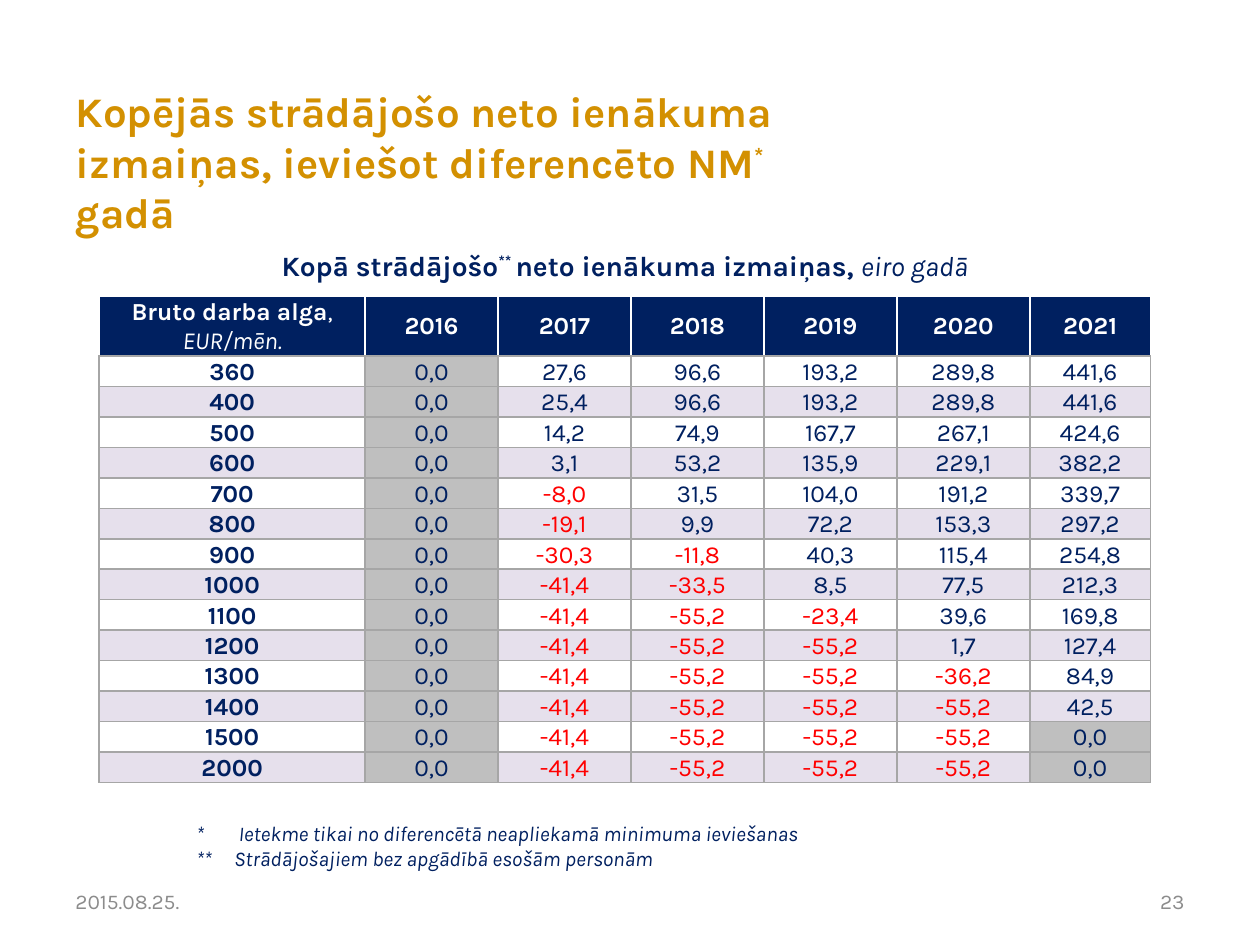
import pptx
import pptx.dml.color
import pptx.enum.text
import pptx.oxml
import pptx.oxml.ns
import pptx.util
from pptx.util import Cm

RGBColor = pptx.dml.color.RGBColor
ALIGN = pptx.enum.text.PP_ALIGN
ANCHOR = pptx.enum.text.MSO_ANCHOR
NAMESPACE = pptx.oxml.ns.nsdecls("a")

GOLD = RGBColor(0xD3, 0x90, 0x01)
NAVY = RGBColor(0x00, 0x20, 0x60)
RED = RGBColor(0xFF, 0x00, 0x00)
WHITE = RGBColor(0xFF, 0xFF, 0xFF)
LILAC = RGBColor(0xE6, 0xE0, 0xEC)
SILVER = RGBColor(0xBF, 0xBF, 0xBF)
BORDER_GREY = RGBColor(0xA6, 0xA6, 0xA6)
FOOTER_GREY = RGBColor(0x8C, 0x8C, 0x8C)

FONT = "Karla"
YEARS = ["2016", "2017", "2018", "2019", "2020", "2021"]
INCOME_CHANGES = [
    ["360", "0,0", "27,6", "96,6", "193,2", "289,8", "441,6"],
    ["400", "0,0", "25,4", "96,6", "193,2", "289,8", "441,6"],
    ["500", "0,0", "14,2", "74,9", "167,7", "267,1", "424,6"],
    ["600", "0,0", "3,1", "53,2", "135,9", "229,1", "382,2"],
    ["700", "0,0", "-8,0", "31,5", "104,0", "191,2", "339,7"],
    ["800", "0,0", "-19,1", "9,9", "72,2", "153,3", "297,2"],
    ["900", "0,0", "-30,3", "-11,8", "40,3", "115,4", "254,8"],
    ["1000", "0,0", "-41,4", "-33,5", "8,5", "77,5", "212,3"],
    ["1100", "0,0", "-41,4", "-55,2", "-23,4", "39,6", "169,8"],
    ["1200", "0,0", "-41,4", "-55,2", "-55,2", "1,7", "127,4"],
    ["1300", "0,0", "-41,4", "-55,2", "-55,2", "-36,2", "84,9"],
    ["1400", "0,0", "-41,4", "-55,2", "-55,2", "-55,2", "42,5"],
    ["1500", "0,0", "-41,4", "-55,2", "-55,2", "-55,2", "0,0"],
    ["2000", "0,0", "-41,4", "-55,2", "-55,2", "-55,2", "0,0"],
]


def add_text(paragraph, text, size=14, color=NAVY, bold=False, italic=False, superscript=False):
    run = paragraph.add_run()
    run.text = text
    run.font.name = FONT
    run.font.size = pptx.util.Pt(size)
    run.font.color.rgb = color
    run.font.bold = bold
    run.font.italic = italic
    if superscript:
        run.font._element.set("baseline", "30000")


def add_text_box(slide, left, top, width, height, align=ALIGN.LEFT):
    text_frame = slide.shapes.add_textbox(Cm(left), Cm(top), Cm(width), Cm(height)).text_frame
    text_frame.word_wrap = True
    text_frame.vertical_anchor = ANCHOR.MIDDLE
    text_frame.paragraphs[0].alignment = align
    return text_frame


def add_title(slide):
    title = slide.shapes.title
    title.left, title.top, title.width, title.height = Cm(1.27), Cm(1.65), Cm(16.08), Cm(3.2)
    title.fill.solid()
    title.fill.fore_color.rgb = WHITE
    title.text_frame.auto_size = pptx.enum.text.MSO_AUTO_SIZE.NONE
    title.text_frame.vertical_anchor = ANCHOR.MIDDLE
    paragraph = title.text_frame.paragraphs[0]
    paragraph.alignment = ALIGN.LEFT
    style = {"size": 24, "color": GOLD, "bold": True}
    add_text(paragraph, "Kopējās strādājošo neto ienākuma izmaiņas, ieviešot diferencēto NM", **style)
    add_text(paragraph, "*", superscript=True, **style)
    add_text(paragraph, " gadā", **style)


def add_table_heading(slide):
    paragraph = add_text_box(slide, 1.7, 4.75, 21.79, 1.19, ALIGN.CENTER).paragraphs[0]
    add_text(paragraph, "Kopā strādājošo", size=16, bold=True)
    add_text(paragraph, "** ", size=16, bold=True, superscript=True)
    add_text(paragraph, "neto ienākuma izmaiņas, ", size=16, bold=True)
    add_text(paragraph, "eiro gadā", size=16, italic=True)


def add_footnotes(slide):
    text_frame = add_text_box(slide, 3.71, 16.46, 16.92, 1.19)
    notes = [
        "*\t Ietekme tikai no diferencētā neapliekamā minimuma ieviešanas",
        "**\tStrādājošajiem bez apgādībā esošām personām",
    ]
    for index, note in enumerate(notes):
        paragraph = text_frame.add_paragraph() if index else text_frame.paragraphs[0]
        paragraph._p.get_or_add_pPr().append(pptx.oxml.parse_xml(
            f'<a:tabLst {NAMESPACE}><a:tab pos="{Cm(0.76)}" algn="l"/></a:tabLst>'))
        add_text(paragraph, note, size=12, italic=True)


def format_cell(cell, fill, anchor, edge_color=BORDER_GREY):
    properties = cell._tc.get_or_add_tcPr()
    edges = {"lnL": edge_color, "lnR": edge_color, "lnT": edge_color, "lnB": BORDER_GREY}
    for edge, color in edges.items():
        properties.append(pptx.oxml.parse_xml(
            f'<a:{edge} {NAMESPACE} w="12700"><a:solidFill><a:srgbClr val="{color}"/>'
            f'</a:solidFill></a:{edge}>'))
    cell.fill.solid()
    cell.fill.fore_color.rgb = fill
    cell.vertical_anchor = anchor
    cell.margin_left = cell.margin_right = cell.margin_top = Cm(0.02)
    cell.margin_bottom = 0
    paragraph = cell.text_frame.paragraphs[0]
    paragraph.alignment = ALIGN.CENTER
    return paragraph


def add_income_table(slide):
    column_widths = [5.36] + [2.68] * 5 + [2.43]
    row_heights = [1.17] + [0.6] * len(INCOME_CHANGES)
    table = slide.shapes.add_table(
        len(row_heights), len(column_widths), Cm(2), Cm(5.97),
        Cm(sum(column_widths)), Cm(sum(row_heights))).table
    table.first_row = table.horz_banding = False
    for column, width in zip(table.columns, column_widths):
        column.width = Cm(width)
    for row, height in zip(table.rows, row_heights):
        row.height = Cm(height)

    headers = [format_cell(cell, NAVY, ANCHOR.MIDDLE, WHITE) for cell in table.rows[0].cells]
    add_text(headers[0], "Bruto darba alga", color=WHITE, bold=True)
    add_text(headers[0], ", ", color=WHITE)
    add_text(headers[0], "EUR/mēn.", color=WHITE, italic=True)
    for paragraph, year in zip(headers[1:], YEARS):
        add_text(paragraph, year, color=WHITE, bold=True)

    for row_index, values in enumerate(INCOME_CHANGES, start=1):
        band = WHITE if row_index % 2 else LILAC
        for column_index, value in enumerate(values):
            fill = SILVER if value == "0,0" else band
            paragraph = format_cell(table.cell(row_index, column_index), fill, ANCHOR.BOTTOM)
            color = RED if value.startswith("-") else NAVY
            add_text(paragraph, value, color=color, bold=column_index == 0)


def add_footer(slide):
    for left, text, align in [(1.27, "2015.08.25.", ALIGN.LEFT), (18.21, "23", ALIGN.RIGHT)]:
        text_frame = add_text_box(slide, left, 17.65, 5.92, 1.02, align)
        add_text(text_frame.paragraphs[0], text, size=12, color=FOOTER_GREY)


def main():
    presentation = pptx.Presentation()
    presentation.slide_width, presentation.slide_height = Cm(25.4), Cm(19.05)
    slide = presentation.slides.add_slide(presentation.slide_layouts[5])
    add_footer(slide)
    add_title(slide)
    add_footnotes(slide)
    add_income_table(slide)
    add_table_heading(slide)
    presentation.save("out.pptx")


if __name__ == "__main__":
    main()
